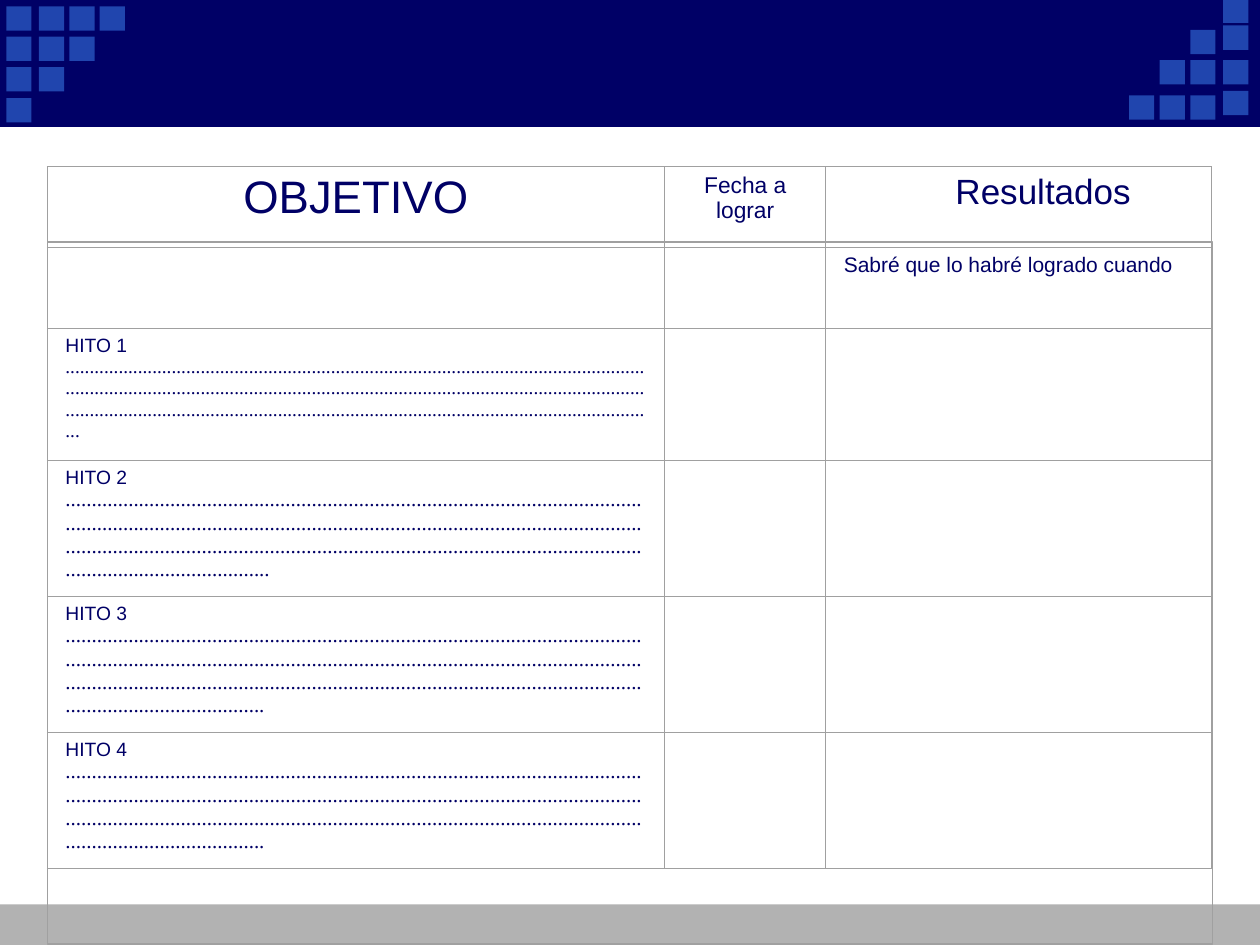
"""Build a goal planning slide with a milestone table."""
import dataclasses

import lxml.etree
import pptx
import pptx.dml.color
import pptx.enum.shapes
import pptx.enum.text
import pptx.oxml.ns
import pptx.util

Pt = pptx.util.Pt
ALIGN = pptx.enum.text.PP_ALIGN


@dataclasses.dataclass(frozen=True)
class Theme:
    navy: str = "000066"
    blue: str = "2045AE"
    gray: str = "B2B2B2"
    rule: str = "A0A0A0"
    sans: str = "Arial"
    serif: str = "Times New Roman"
    title: int = 26
    head: int = 20
    sub: int = 13
    body: int = 12
    small: int = 11


THEME = Theme()


def color(code):
    return pptx.dml.color.RGBColor.from_string(code)


def write(frame, text, size=THEME.body, font=THEME.sans, align=ALIGN.LEFT, add=False):
    para = frame.add_paragraph() if add else frame.paragraphs[0]
    para.alignment = align
    run = para.add_run()
    run.text = text
    run.font.size = Pt(size)
    run.font.name = font
    run.font.color.rgb = color(THEME.navy)


class Page:
    """Hold the theme and the current slide, and draw on it."""

    def __init__(self, slide, theme):
        self.slide = slide
        self.theme = theme

    def box(self, left, top, width, height, fill=None, line=None, weight=0.75):
        shape = self.slide.shapes.add_shape(
            pptx.enum.shapes.MSO_SHAPE.RECTANGLE,
            Pt(left), Pt(top), Pt(width), Pt(height))
        shape.shadow.inherit = False
        if fill:
            shape.fill.solid()
            shape.fill.fore_color.rgb = color(fill)
        else:
            shape.fill.background()
        if line:
            shape.line.color.rgb = color(line)
            shape.line.width = Pt(weight)
        else:
            shape.line.fill.background()

    def tiles(self, cols):
        for left, tops in cols:
            for top in tops:
                self.box(left, top, 14.4, 13.9, fill=self.theme.blue)

    def border(self, cell):
        props = cell._tc.get_or_add_tcPr()
        name = pptx.oxml.ns.qn
        for side in ("a:lnL", "a:lnR", "a:lnT", "a:lnB"):
            line = lxml.etree.SubElement(props, name(side), w=str(Pt(0.5)))
            fill = lxml.etree.SubElement(line, name("a:solidFill"))
            lxml.etree.SubElement(fill, name("a:srgbClr"), val=self.theme.rule)

    def grid(self, left, top, widths, heights):
        table = self.slide.shapes.add_table(
            len(heights), len(widths), Pt(left), Pt(top),
            Pt(sum(widths)), Pt(sum(heights))).table
        table.first_row = table.horz_banding = False
        for col, width in zip(table.columns, widths):
            col.width = Pt(width)
        for row, height in zip(table.rows, heights):
            row.height = Pt(height)
        for cell in table.iter_cells():
            cell.margin_left = cell.margin_right = Pt(10.4)
            cell.margin_top, cell.margin_bottom = Pt(3.6), Pt(0)
            self.border(cell)
            cell.fill.background()
        return table


def main():
    deck = pptx.Presentation()
    deck.slide_width, deck.slide_height = Pt(720), Pt(540)
    page = Page(deck.slides.add_slide(deck.slide_layouts[6]), THEME)

    page.box(0, 516.8, 720, 23.2, fill=THEME.gray)
    page.box(0, 0, 720, 72, fill=THEME.navy, line=THEME.navy)
    rows = [3.6, 21, 38.4, 56.1]
    page.tiles((left, rows[:4 - i]) for i, left in enumerate([3.6, 22.3, 39.7, 57]))
    steps = [54.5, 34.4, 17.1]
    page.tiles((left, steps[:i + 1]) for i, left in enumerate([645.2, 662.7, 680.2]))
    page.tiles([(699, [-0.7, 14.6, 34.4, 52])])

    table = page.grid(27, 95.1, [352.8, 92, 220.6],
                      [46.3, 46.3, 75.4, 77.7, 77.7, 77.7])
    heads = [("OBJETIVO", THEME.title), ("Fecha a lograr", THEME.sub),
             ("Resultados", THEME.head)]
    for col, (text, size) in enumerate(heads):
        write(table.cell(0, col).text_frame, text, size=size, align=ALIGN.CENTER)
    table.cell(0, 2).margin_left = Pt(38.4)
    write(table.cell(1, 2).text_frame, "Sabré que lo habré logrado cuando")

    goals = [(363, THEME.small), (369, THEME.body), (368, THEME.body), (368, THEME.body)]
    for num, (dots, size) in enumerate(goals, 1):
        frame = table.cell(num + 1, 0).text_frame
        write(frame, f"HITO {num}", size=THEME.small)
        write(frame, "." * dots, size=size, font=THEME.serif, add=True)

    page.box(27, 138.2, 666, 401.4, line=THEME.rule, weight=0.87)
    deck.save("out.pptx")


if __name__ == "__main__":
    main()
